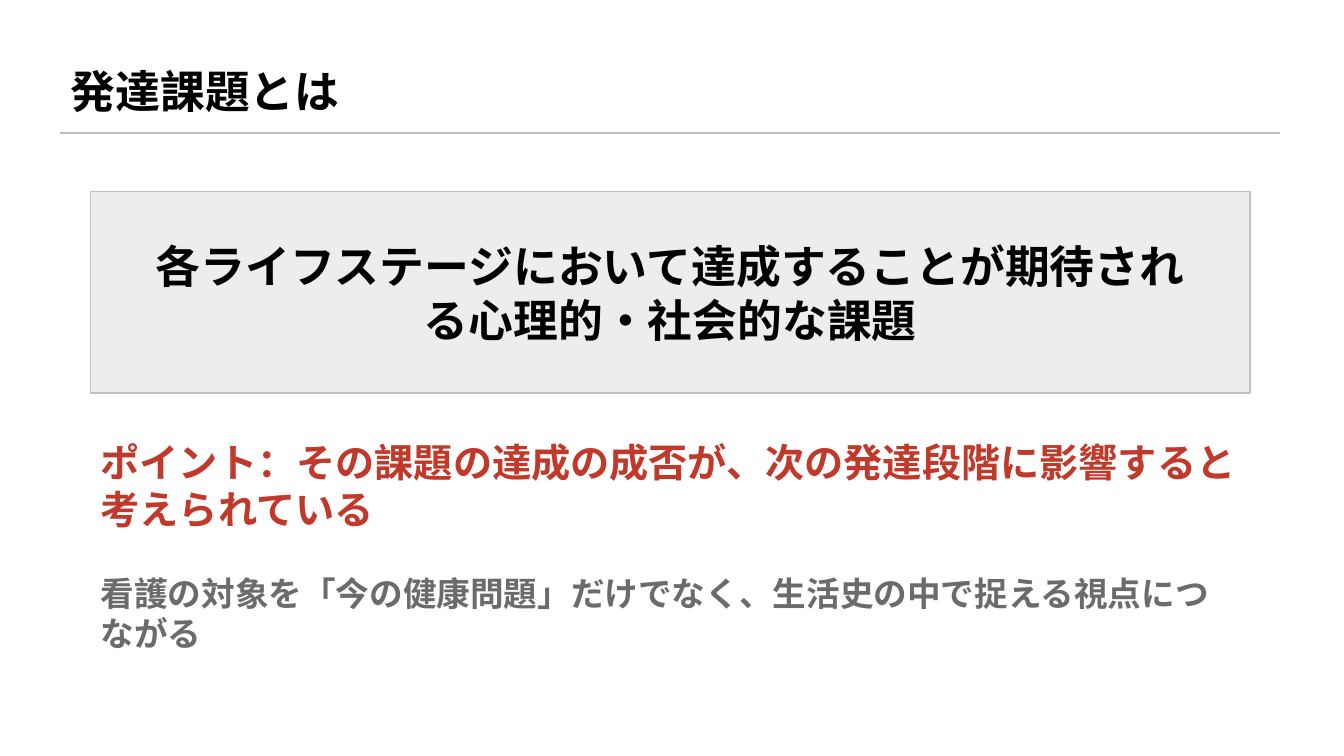
from dataclasses import dataclass

from lxml import etree
from pptx import Presentation
from pptx.dml.color import RGBColor
from pptx.enum.shapes import MSO_CONNECTOR, MSO_SHAPE
from pptx.enum.text import MSO_ANCHOR, MSO_AUTO_SIZE, PP_ALIGN
from pptx.oxml.ns import qn
from pptx.util import Emu, Pt

PX = 9144  # 100 px to the inch
FONT = "Noto Sans CJK JP"
BLACK, RED, GRAY = "000000", "C0392B", "6B6B6B"
PALE, RULE = "EDEDED", "BFBFBF"
LEFT, CENTER = PP_ALIGN.LEFT, PP_ALIGN.CENTER
TOP, MIDDLE = MSO_ANCHOR.TOP, MSO_ANCHOR.MIDDLE
NO_FIT = MSO_AUTO_SIZE.NONE
RECT, STRAIGHT = MSO_SHAPE.RECTANGLE, MSO_CONNECTOR.STRAIGHT
TITLE_ONLY = 5


@dataclass
class Label:
    text: str
    box: tuple[int, int, int, int]
    size: int
    color: str = BLACK
    align: PP_ALIGN = LEFT
    anchor: MSO_ANCHOR = MIDDLE


TITLE = Label("発達課題とは", (60, 45, 1210, 90), 32)
LABELS = [
    Label("各ライフステージにおいて達成することが期待される心理的・社会的な課題",
          (130, 215, 1070, 150), 32, align=CENTER),
    Label("ポイント：その課題の達成の成否が、次の発達段階に影響すると考えられている",
          (90, 430, 1150, 80), 28, RED, anchor=TOP),
    Label("看護の対象を「今の健康問題」だけでなく、生活史の中で捉える視点につながる",
          (90, 578, 1150, 60), 24, GRAY),
]


def px(*sides: int) -> list[Emu]:
    return [Emu(side * PX) for side in sides]


def rgb(code: str) -> RGBColor:
    return RGBColor.from_string(code)


def write(shape, label: Label) -> None:
    """Place a text shape and format its one paragraph."""
    shape.left, shape.top, shape.width, shape.height = px(*label.box)
    frame = shape.text_frame
    frame.word_wrap = True
    frame.auto_size = NO_FIT
    frame.vertical_anchor = label.anchor
    frame.text = label.text
    para = frame.paragraphs[0]
    para.alignment = label.align
    font = para.font
    font.name, font.size, font.bold = FONT, Pt(label.size), True
    font.color.rgb = rgb(label.color)
    # Japanese glyphs take the East Asian typeface
    latin = para._p.pPr.find(qn("a:defRPr")).find(qn("a:latin"))
    east = etree.Element(qn("a:ea"), typeface=FONT)
    latin.addnext(east)


def stroke(shape) -> None:
    shape.line.color.rgb = rgb(RULE)
    shape.line.width = Pt(1)


def main() -> None:
    deck = Presentation()
    deck.slide_width, deck.slide_height = px(1333, 750)
    slide = deck.slides.add_slide(deck.slide_layouts[TITLE_ONLY])
    shapes = slide.shapes

    # Title and rule
    write(shapes.title, TITLE)
    rule = shapes.add_connector(STRAIGHT, *px(60, 132, 1270, 132))
    stroke(rule)
    etree.SubElement(rule._element.spPr, qn("a:effectLst"))

    # Definition panel
    panel = shapes.add_shape(RECT, *px(90, 190, 1150, 200))
    panel.shadow.inherit = False
    panel.fill.solid()
    panel.fill.fore_color.rgb = rgb(PALE)
    stroke(panel)

    # Texts
    for label in LABELS:
        write(shapes.add_textbox(*px(*label.box)), label)

    deck.save("out.pptx")


if __name__ == "__main__":
    main()
